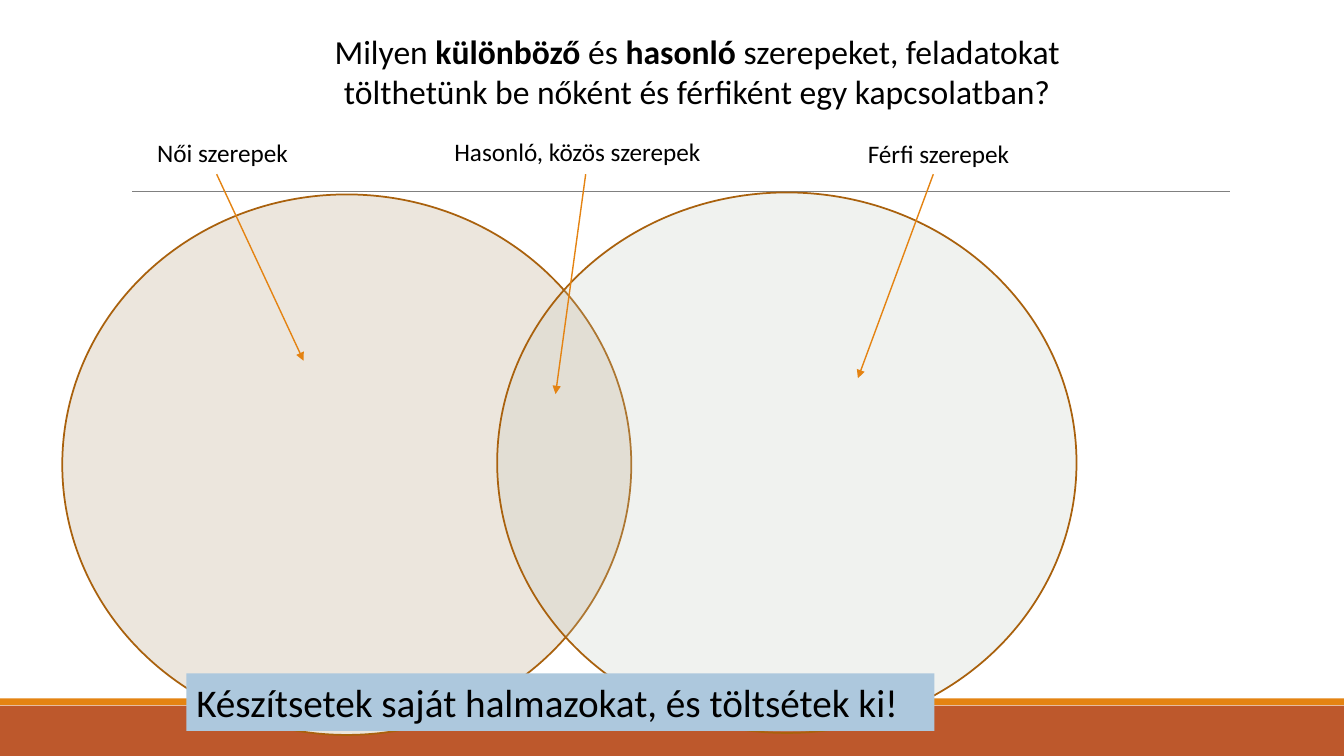
from lxml import etree
from pptx import Presentation
from pptx.dml.color import RGBColor
from pptx.enum.shapes import MSO_CONNECTOR, MSO_SHAPE
from pptx.enum.text import MSO_ANCHOR, PP_ALIGN
from pptx.oxml.ns import qn
from pptx.util import Cm, Pt

STRAIGHT = MSO_CONNECTOR.STRAIGHT
OVAL, RECTANGLE = MSO_SHAPE.OVAL, MSO_SHAPE.RECTANGLE
TOP = MSO_ANCHOR.TOP
LEFT, CENTER = PP_ALIGN.LEFT, PP_ALIGN.CENTER

FONT = "Calibri"
BLACK, ORANGE, RUST, BROWN = "000000", "E48312", "BD582C", "A9610D"
TITLE_LINES = [
    [("Milyen ", False), ("különböző ", True), ("és ", False),
     ("hasonló ", True), ("szerepeket, feladatokat", False)],
    [("tölthetünk be nőként és férfiként egy kapcsolatban?", False)],
]

# Each label: text, box (left, top, width, height), arrow start and end
ROLES = [
    ("Női szerepek", (3.71, 3.33, 4.24, 1.02), (5.46, 4.39), (7.65, 9.09)),
    ("Hasonló, közös szerepek", (11.2, 3.3, 8.64, 1.02), (14.76, 4.39), (14, 9.93)),
    ("Férfi szerepek", (21.62, 3.35, 7.92, 1.02), (23.52, 4.39), (21.62, 9.53)),
]


def rgb(hex_color):
    return RGBColor.from_string(hex_color)


def lengths(values):
    return [Cm(value) for value in values]


def add_figure(slide, preset, box, fill, outline=None, opacity=None):
    figure = slide.shapes.add_shape(preset, *lengths(box))
    figure.shadow.inherit = False
    figure.fill.solid()
    figure.fill.fore_color.rgb = rgb(fill)
    if opacity is not None:
        color = figure.fill._xPr.find(qn("a:solidFill"))[0]
        etree.SubElement(color, qn("a:alpha"), val=str(opacity * 1000))
    if outline:
        figure.line.color.rgb = rgb(outline)
        figure.line.width = Pt(1.25)
    else:
        figure.line.fill.background()
    return figure


def add_line(slide, start, end, color, width, arrow=False):
    line = slide.shapes.add_connector(STRAIGHT, *lengths(start + end))
    line.line.color.rgb = rgb(color)
    line.line.width = Pt(width)
    if arrow:
        etree.SubElement(line.line._get_or_add_ln(), qn("a:tailEnd"), type="triangle")
    etree.SubElement(line._element.spPr, qn("a:effectLst"))


def write(frame, lines, size, align=LEFT):
    frame.word_wrap = True
    frame.vertical_anchor = TOP
    for index, parts in enumerate(lines):
        paragraph = frame.add_paragraph() if index else frame.paragraphs[0]
        paragraph.alignment = align
        for text, bold in parts:
            run = paragraph.add_run()
            run.text = text
            run.font.name = FONT
            run.font.size = Pt(size)
            run.font.bold = bold
            run.font.color.rgb = rgb(BLACK)


def add_title(slide):
    title = slide.shapes.title
    title.left, title.top, title.width, title.height = lengths((1.57, 0.64, 32, 2.31))
    write(title.text_frame, TITLE_LINES, 24, CENTER)


def add_role(slide, text, box, start, end):
    label = slide.shapes.add_textbox(*lengths(box))
    write(label.text_frame, [[(text, False)]], 18)
    add_line(slide, start, end, ORANGE, 1, arrow=True)


def main():
    prs = Presentation()
    prs.slide_width, prs.slide_height = Cm(33.87), Cm(19.05)
    slide = prs.slides.add_slide(prs.slide_layouts[5])

    # Footer bands and the rule under the heading
    add_figure(slide, RECTANGLE, (0, 17.78, 33.87, 1.27), RUST)
    add_figure(slide, RECTANGLE, (0, 17.6, 33.87, 0.17), ORANGE)
    add_line(slide, (3.33, 4.82), (31, 4.82), "808080", 0.5)

    add_title(slide)

    # Overlapping sets
    add_figure(slide, OVAL, (1.57, 4.9, 14.34, 13.62), "ECE6DD", BROWN)
    add_figure(slide, OVAL, (12.53, 4.85, 14.6, 13.62), "BFC6B8", BROWN, opacity=22)

    # Labels with arrows into the sets
    for role in ROLES:
        add_role(slide, *role)

    # Task
    task = add_figure(slide, RECTANGLE, (4.7, 16.97, 18.85, 1.45), "ADC8DD")
    write(task.text_frame, [[("Készítsetek saját halmazokat, és töltsétek ki!", False)]], 28)

    prs.save("out.pptx")


if __name__ == "__main__":
    main()
